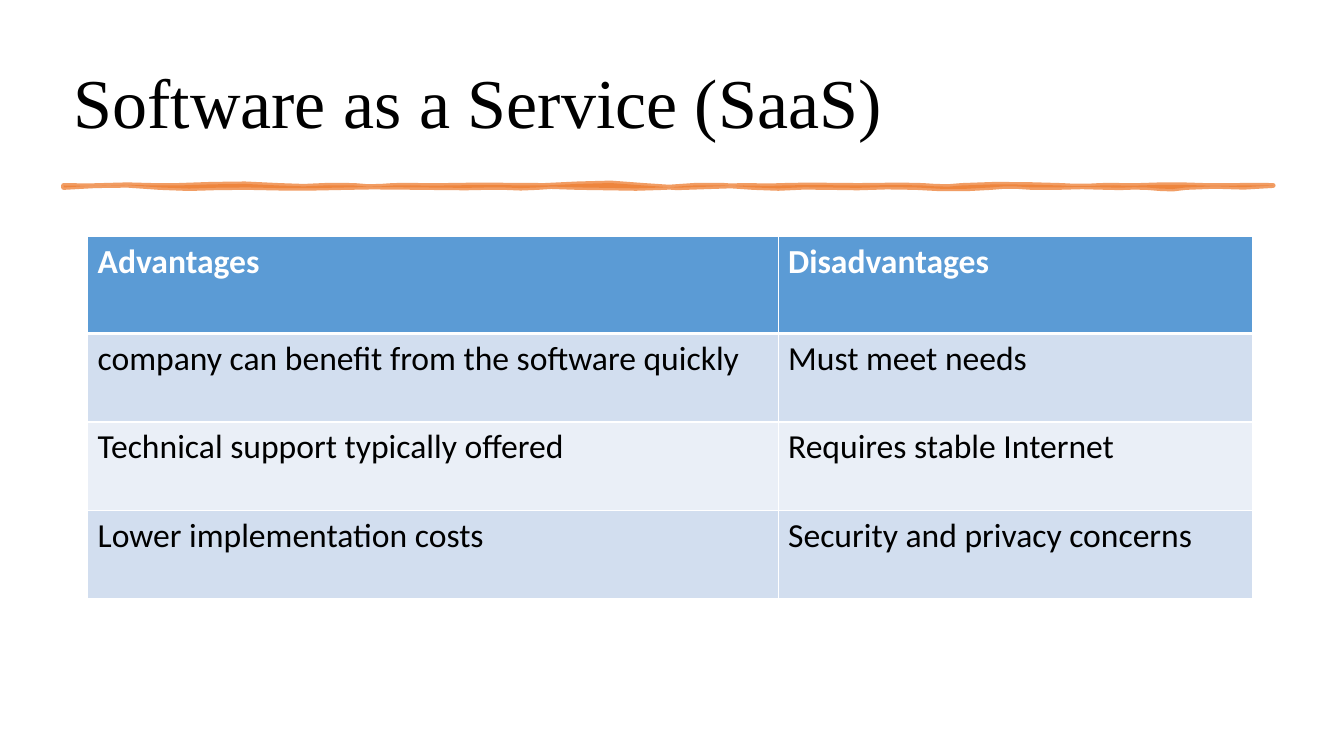
from pptx import Presentation
from pptx import util as u
from pptx.dml import color
from pptx.enum import text
from pptx.oxml import parse_xml
from pptx.oxml import ns

TITLE = "Software as a Service (SaaS)"
ROWS = [
    ("Advantages", "Disadvantages"),
    ("company can benefit from the software quickly", "Must meet needs"),
    ("Technical support typically offered", "Requires stable Internet"),
    ("Lower implementation costs", "Security and privacy concerns"),
]

BRUSH_UPPER = [
    (73, 0, 1), (127, -2, 1), (199, -1, -3), (253, 3, -2), (281, 2, 1), (318, -1, 1),
    (389, -1, 0), (460, -1, -5), (531, 5, 0), (559, 0, 1), (613, -1, 0), (659, 0, -1),
    (687, 1, 2), (758, -2, -1), (786, 1, 1), (814, -1, 1), (860, -1, -1), (909.4, 1, -1),
]
BRUSH_LOWER = [
    (847, 1, -3), (819, 3, 1), (791, -1, 1), (737, -2, 1), (708, -1, -2), (654, 2, 2),
    (592, -2, 2), (538, -2, 3), (475, -3, -3), (413, 2, 0), (384, 0, -2), (348, 2, -1),
    (302, 1, 0), (248, 0, -1), (177, 1, 1), (114, -1, 3), (45.4, -4, -2),
]

THEME = {
    "title_font": "Times New Roman", "title_size": 50,
    "body_font": "Calibri", "body_size": 24,
    "ink": "000000", "white": "FFFFFF", "header": "5B9BD5",
    "bands": ("EAEFF7", "D2DEEF"), "brush": "ED7D31",
}
BRUSH_LEFT, BRUSH_TOP, BRUSH_BOTTOM = 45.4, 132.5, 133.9
BRUSH_WEIGHT, BRUSH_OPACITY = 3.5, 75
PULL, STEPS = 0.72, 3
TABLE_LEFT, TABLE_TOP = 62.6, 169.2
COLUMN_WIDTHS = (493.2, 339.1)
HEADER_HEIGHT, ROW_HEIGHT = 69.1, 63.1


def rgb(name):
    return color.RGBColor.from_string(name)


def set_font(paragraph, family, size, ink, bold=False):
    font = paragraph.font
    font.name, font.size, font.bold = family, u.Pt(size), bold
    font.color.rgb = rgb(ink)


def edge_points(start, base, bends):
    points = []
    for end, first_pull, second_pull in bends:
        for step in range(1, STEPS + 1):
            t = step / STEPS
            rise = 3 * t * (1 - t) * ((1 - t) * first_pull + t * second_pull) * PULL
            points.append((u.Pt(start + (end - start) * t), u.Pt(base + rise)))
        start = end
    return points


def paint(fill):
    fill.solid()
    fill.fore_color.rgb = rgb(THEME["brush"])
    tint = fill._xPr.find(ns.qn("a:solidFill"))[0]
    tint.append(parse_xml(f'<a:alpha {ns.nsdecls("a")} val="{BRUSH_OPACITY * 1000}"/>'))


def add_brush(slide):
    outline = slide.shapes.build_freeform(u.Pt(BRUSH_LEFT), u.Pt(BRUSH_TOP), scale=1.0)
    outline.add_line_segments(
        edge_points(BRUSH_LEFT, BRUSH_TOP, BRUSH_UPPER)
        + edge_points(BRUSH_UPPER[-1][0], BRUSH_BOTTOM, BRUSH_LOWER), close=True)
    brush = outline.convert_to_shape()
    brush.shadow.inherit = False
    paint(brush.fill)
    brush.line.width = u.Pt(BRUSH_WEIGHT)
    paint(brush.line.fill)
    brush.line._ln.append(parse_xml(f'<a:round {ns.nsdecls("a")}/>'))


def set_borders(cell, top, bottom):
    properties = cell._tc.get_or_add_tcPr()
    for place, (side, weight) in enumerate(zip("LRTB", (1, 1, top, bottom))):
        properties.insert(place, parse_xml(
            f'<a:ln{side} {ns.nsdecls("a")} w="{u.Pt(weight)}"><a:solidFill>'
            f'<a:srgbClr val="{THEME["white"]}"/></a:solidFill></a:ln{side}>'))


def add_title(slide):
    title = slide.shapes.add_textbox(u.Pt(45.4), u.Pt(19.1), u.Pt(867.6), u.Pt(113)).text_frame
    title.word_wrap = True
    title.vertical_anchor = text.MSO_ANCHOR.MIDDLE
    heading = title.paragraphs[0]
    heading.text = TITLE
    heading.line_spacing = 0.9
    set_font(heading, THEME["title_font"], THEME["title_size"], THEME["ink"])


def add_comparison(slide):
    heights = [HEADER_HEIGHT] + [ROW_HEIGHT] * (len(ROWS) - 1)
    comparison = slide.shapes.add_table(
        len(ROWS), len(COLUMN_WIDTHS), u.Pt(TABLE_LEFT), u.Pt(TABLE_TOP),
        u.Pt(sum(COLUMN_WIDTHS)), u.Pt(sum(heights))).table
    for column, width in zip(comparison.columns, COLUMN_WIDTHS):
        column.width = u.Pt(width)
    for r, (row, height) in enumerate(zip(ROWS, heights)):
        comparison.rows[r].height = u.Pt(height)
        is_header = r == 0
        for c, wording in enumerate(row):
            cell = comparison.cell(r, c)
            cell.text = wording
            set_font(cell.text_frame.paragraphs[0], THEME["body_font"], THEME["body_size"],
                     THEME["white" if is_header else "ink"], is_header)
            cell.fill.solid()
            cell.fill.fore_color.rgb = rgb(THEME["header"] if is_header else THEME["bands"][r % 2])
            set_borders(cell, 3 if r == 1 else 1, 3 if is_header else 1)


def main():
    deck = Presentation()
    deck.slide_width, deck.slide_height = u.Pt(960), u.Pt(540)
    slide = deck.slides.add_slide(deck.slide_layouts[6])
    add_title(slide)
    add_brush(slide)
    add_comparison(slide)
    deck.save("out.pptx")


if __name__ == "__main__":
    main()
